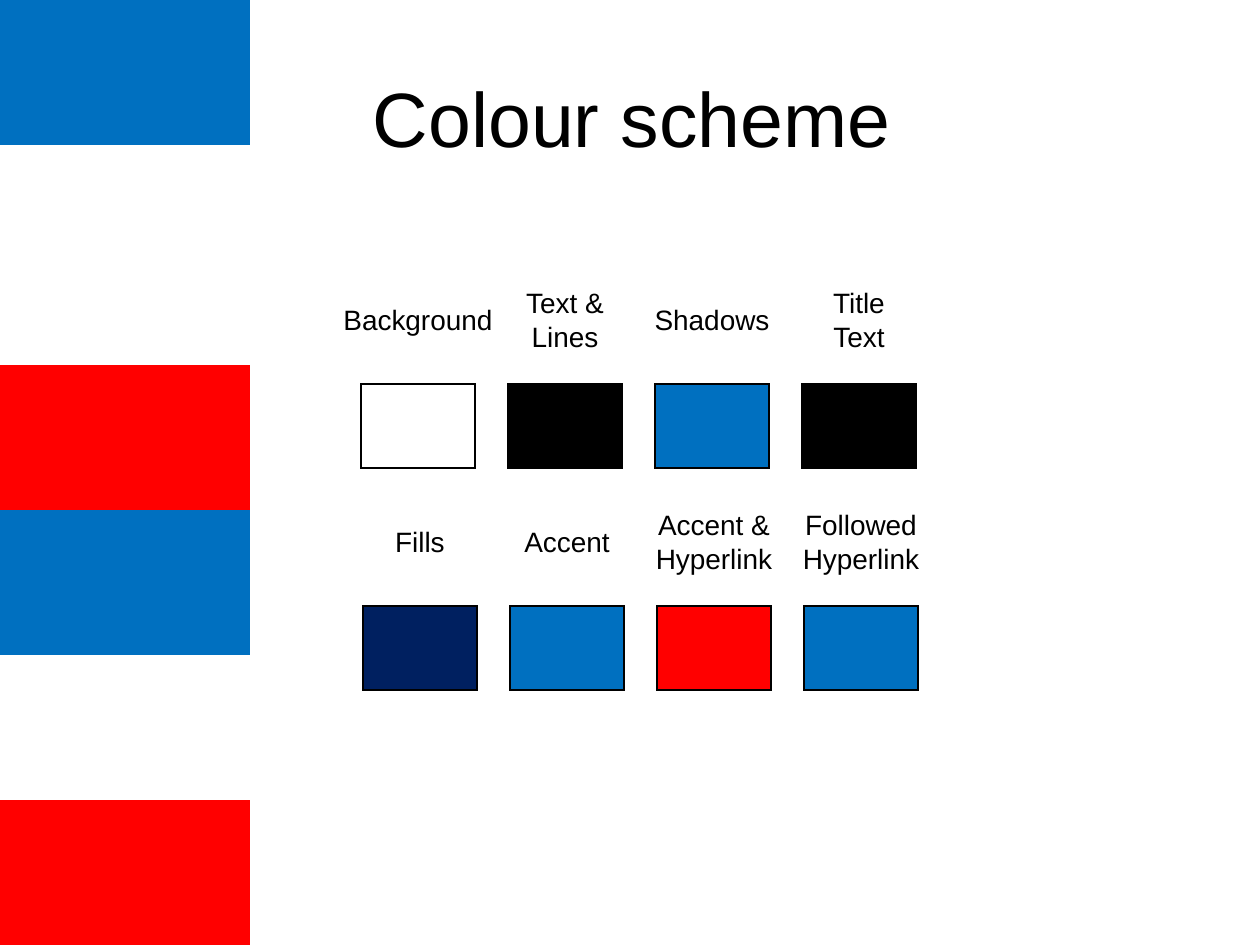
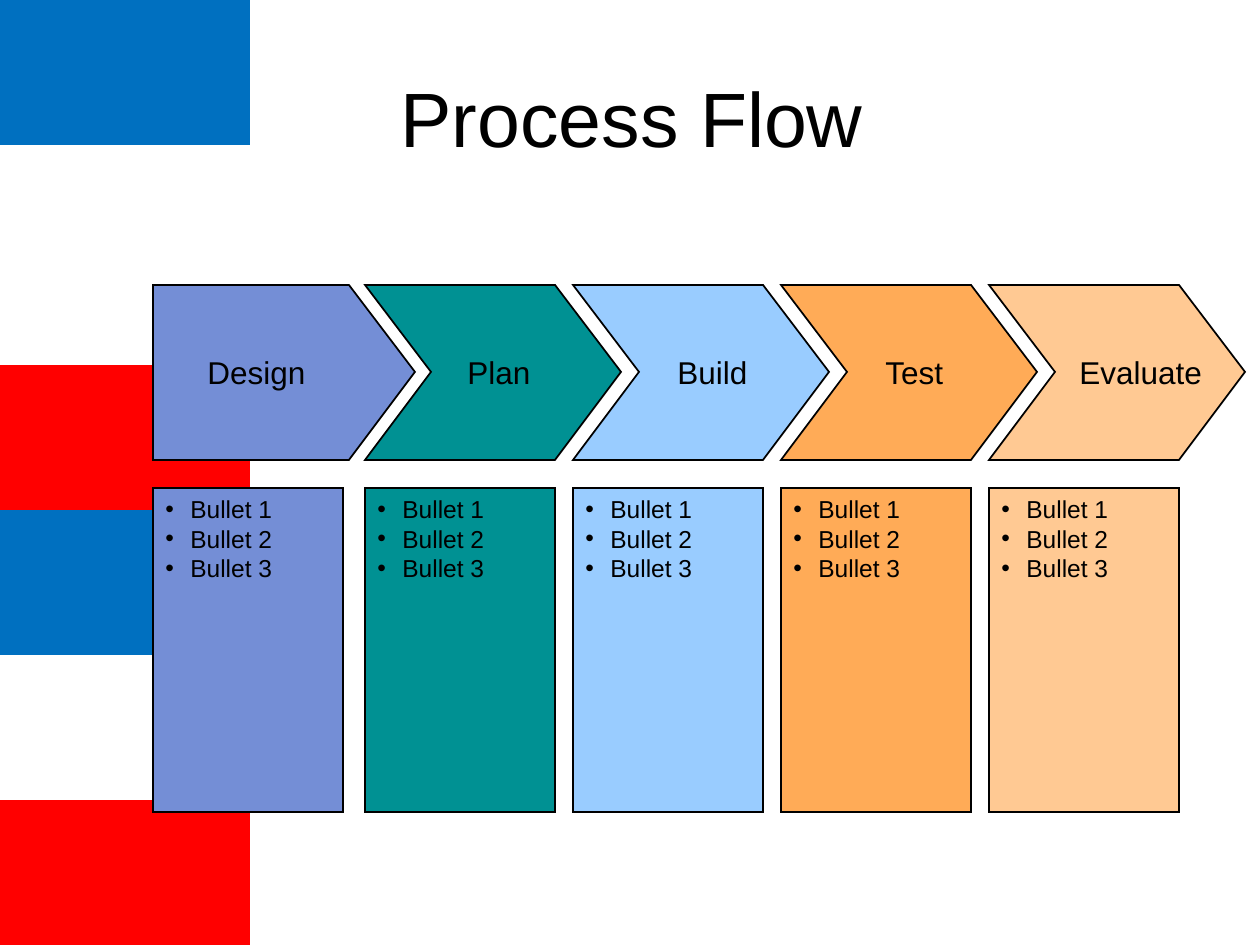
from dataclasses import dataclass
from typing import Any

import pptx
import pptx.dml.color
import pptx.enum.shapes
import pptx.enum.text
import pptx.oxml.ns
import pptx.util
from lxml import etree

SCALE = 914400 / 126
BLACK, WHITE, BLUE, RED, NAVY = "000000", "FFFFFF", "0070C0", "FF0000", "002060"
ALIGN = pptx.enum.text.PP_ALIGN
ANCHOR = pptx.enum.text.MSO_ANCHOR
AUTO_SIZE = pptx.enum.text.MSO_AUTO_SIZE
RECTANGLE = pptx.enum.shapes.MSO_SHAPE.RECTANGLE

TITLE_FRAME = {"word_wrap": True, "auto_size": AUTO_SIZE.NONE, "vertical_anchor": ANCHOR.MIDDLE}
LABEL_FRAME = {"word_wrap": False, "auto_size": AUTO_SIZE.SHAPE_TO_FIT_TEXT}
LIST_FRAME = {"word_wrap": True, "vertical_anchor": ANCHOR.TOP}


@dataclass(frozen=True)
class Band:
    top: int
    height: int
    colour: str


@dataclass(frozen=True)
class Swatch:
    label: str
    label_width: int
    colour: str


@dataclass(frozen=True)
class SwatchRow:
    left: int
    top: int
    label_middle: int
    swatches: tuple[Swatch, ...]


@dataclass(frozen=True)
class Stage:
    name: str
    left: int
    label_left: int
    label_width: int
    colour: str


BAND_WIDTH = 250
BANDS = (
    Band(510, 145, BLUE),
    Band(365, 145, RED),
    Band(145, 220, WHITE),
    Band(800, 145, RED),
    Band(0, 145, BLUE),
)

SWATCH_WIDTH, SWATCH_HEIGHT, SWATCH_PITCH = 114, 84, 147
SWATCH_ROWS = (
    SwatchRow(361, 384, 320, (
        Swatch("Background", 178, WHITE),
        Swatch("Text &\nLines", 108, BLACK),
        Swatch("Shadows", 142, BLUE),
        Swatch("Title\vText", 82, BLACK),
    )),
    SwatchRow(363, 606, 542, (
        Swatch("Fills", 78, NAVY),
        Swatch("Accent", 114, BLUE),
        Swatch("Accent &\nHyperlink", 146, RED),
        Swatch("Followed\nHyperlink", 146, BLUE),
    )),
)

STAGE_WIDTH, STAGE_PITCH, SECOND_LEFT = 190, 208, 365
ARROW_TOP, ARROW_HEIGHT, ARROW_TIP = 285, 175, 66
LIST_TOP, LIST_HEIGHT = 488, 324
STAGES = (
    Stage("Design", 153, 195, 126, "748ED6"),
    Stage("Plan", SECOND_LEFT, 455, 90, "009193"),
    Stage("Build", SECOND_LEFT + STAGE_PITCH, 665, 98, "99CCFF"),
    Stage("Test", SECOND_LEFT + 2 * STAGE_PITCH, 873, 90, "FFAB57"),
    Stage("Evaluate", SECOND_LEFT + 3 * STAGE_PITCH, 1067, 152, "FFC993"),
)


def px(length: float) -> int:
    return round(length * SCALE)


def colour(code: str) -> pptx.dml.color.RGBColor:
    return pptx.dml.color.RGBColor.from_string(code)


def set_values(target: Any, values: dict[str, Any]) -> None:
    for name, value in values.items():
        setattr(target, name, value)


def write(frame: Any, text: str, size: int, alignment: Any, frame_values: dict[str, Any]) -> None:
    frame.text = text
    set_values(frame, frame_values)
    for para in frame.paragraphs:
        para.alignment = alignment
        for span in para.runs:
            set_values(span.font, {"name": "Arial", "size": pptx.util.Pt(size)})
            span.font.color.rgb = colour(BLACK)


def paint(shape: Any, fill: str, line_width: float = 0) -> None:
    shape.shadow.inherit = False
    shape.fill.solid()
    shape.fill.fore_color.rgb = colour(fill)
    if line_width:
        shape.line.color.rgb = colour(BLACK)
        shape.line.width = pptx.util.Pt(line_width)
        line = shape.element.spPr.find(pptx.oxml.ns.qn("a:ln"))
        etree.SubElement(line, pptx.oxml.ns.qn("a:miter")).set("lim", "800000")
    else:
        shape.line.fill.background()


def add_box(page: Any, left: int, top: int, width: int, height: int,
            fill: str, line_width: float = 0) -> Any:
    box = page.shapes.add_shape(RECTANGLE, px(left), px(top), px(width), px(height))
    paint(box, fill, line_width)
    return box


def add_label(page: Any, text: str, left: float, top: float, width: int, height: int,
              size: int, alignment: Any) -> None:
    box = page.shapes.add_textbox(px(left), px(top), px(width), px(height))
    write(box.text_frame, text, size, alignment, LABEL_FRAME)


def add_bullet(para: Any) -> None:
    properties = para._p.get_or_add_pPr()
    properties.set("marL", str(px(25)))
    properties.set("indent", str(px(-25)))
    font = etree.SubElement(properties, pptx.oxml.ns.qn("a:buFont"))
    font.set("typeface", "Arial")
    bullet = etree.SubElement(properties, pptx.oxml.ns.qn("a:buChar"))
    bullet.set("char", "•")


def add_page(deck: Any, title: str) -> Any:
    page = deck.slides.add_slide(deck.slide_layouts.get_by_name("Title Only"))
    box = page.shapes.title
    set_values(box, {"left": px(67), "top": px(38), "width": px(1130), "height": px(158)})
    write(box.text_frame, title, 44, ALIGN.CENTER, TITLE_FRAME)
    return page


def add_master_bands(deck: Any, page: Any) -> None:
    master_tree = deck.slide_master.shapes.element
    for index, band in enumerate(BANDS):
        box = add_box(page, 0, band.top, BAND_WIDTH, band.height, band.colour)
        box.element.nvSpPr.cNvPr.set("id", str(100 + index))
        master_tree.insert(2 + index, box.element)


def draw_swatch_row(page: Any, row: SwatchRow) -> None:
    for index, swatch in enumerate(row.swatches):
        left = row.left + index * SWATCH_PITCH
        add_box(page, left, row.top, SWATCH_WIDTH, SWATCH_HEIGHT, swatch.colour, 0.75)
        height = 47 if len(swatch.label.splitlines()) == 1 else 81
        add_label(page, swatch.label, left + (SWATCH_WIDTH - swatch.label_width) / 2,
                  row.label_middle - height / 2, swatch.label_width, height, 16, ALIGN.CENTER)


def draw_list(page: Any, stage: Stage) -> None:
    box = add_box(page, stage.left, LIST_TOP, STAGE_WIDTH, LIST_HEIGHT, stage.colour, 1)
    bullets = "\n".join(f"Bullet {number}" for number in range(1, 4))
    write(box.text_frame, bullets, 14, ALIGN.LEFT, LIST_FRAME)
    for para in box.text_frame.paragraphs:
        add_bullet(para)


def draw_arrow(page: Any, stage: Stage, first: bool) -> None:
    shoulder = stage.left + STAGE_WIDTH + (6 if first else 0)
    middle, bottom = ARROW_TOP + ARROW_HEIGHT / 2, ARROW_TOP + ARROW_HEIGHT
    points = [(shoulder, ARROW_TOP), (shoulder + ARROW_TIP, middle),
              (shoulder, bottom), (stage.left, bottom)]
    if not first:
        points.append((stage.left + ARROW_TIP, middle))
    outline = page.shapes.build_freeform(stage.left, ARROW_TOP, scale=SCALE)
    outline.add_line_segments(points, close=True)
    paint(outline.convert_to_shape(), stage.colour, 1)


def main() -> None:
    deck = pptx.Presentation()
    set_values(deck, {"slide_width": px(1260), "slide_height": px(945)})

    scheme_page = add_page(deck, "Colour scheme")
    add_master_bands(deck, scheme_page)
    for row in SWATCH_ROWS:
        draw_swatch_row(scheme_page, row)

    flow_page = add_page(deck, "Process Flow")
    for index, stage in enumerate(STAGES):
        draw_list(flow_page, stage)
        draw_arrow(flow_page, stage, first=index == 0)
        add_label(flow_page, stage.name, stage.label_left, 347, stage.label_width, 50,
                  18, ALIGN.LEFT)

    deck.save("out.pptx")


if __name__ == "__main__":
    main()
